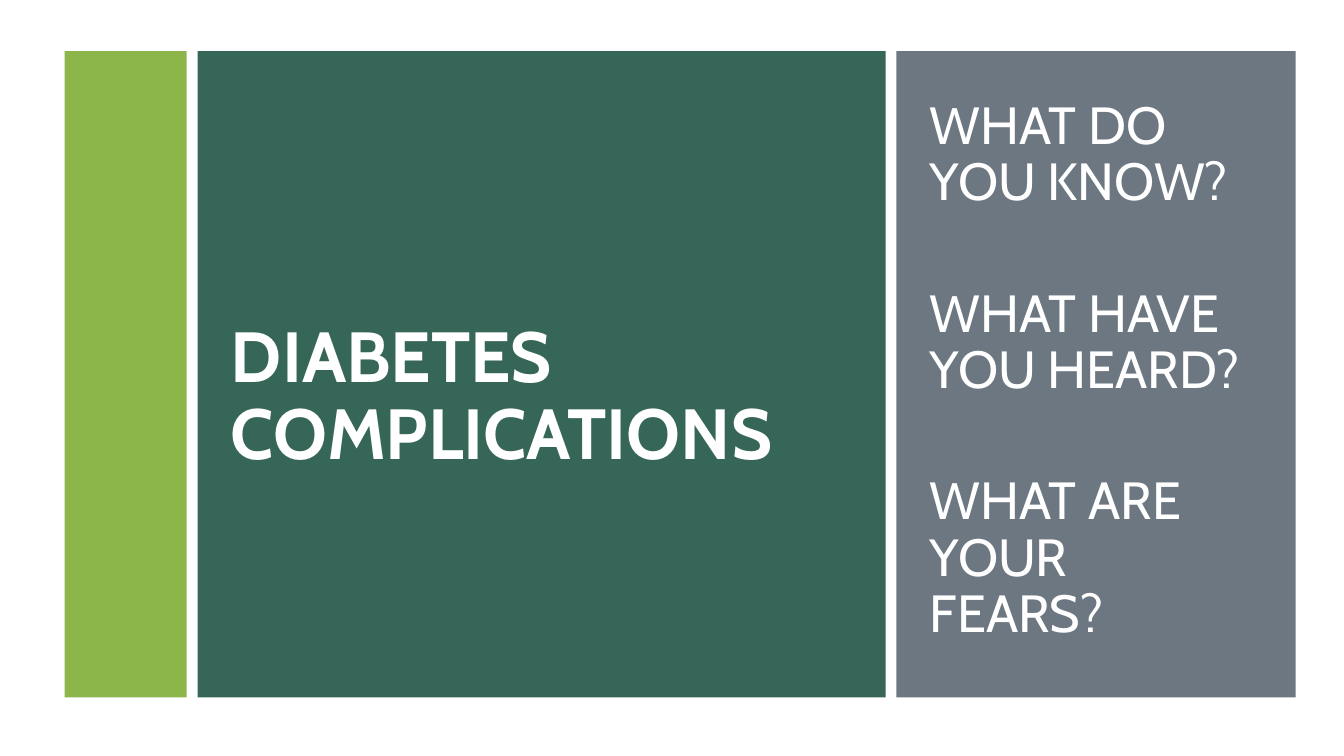
from pptx import Presentation
from pptx.dml.color import RGBColor
from pptx.enum import shapes, text
from pptx.util import Inches, Pt

TITLE = ["DIABETES COMPLICATIONS"]
QUESTIONS = ["WHAT DO YOU KNOW?", "WHAT HAVE YOU HEARD?", "WHAT ARE YOUR FEARS?"]

THEME = {
    "font": "Cabin",
    "text": "FFFFFF",
    "accent": "8CB64A",
    "title_panel": "366658",
    "question_panel": "6C7781",
    "title_size": 38,
    "question_size": 28,
}

PANELS = [("accent", 0.91), ("title_panel", 5.12), ("question_panel", 2.97)]
LEFT, TOP, HEIGHT, GAP = 0.48, 0.38, 4.81, 0.08
TEXT_INDENT = 0.15


def add_panel(slide, left, width, color):
    panel = slide.shapes.add_shape(
        shapes.MSO_SHAPE.RECTANGLE,
        Inches(left), Inches(TOP), Inches(width), Inches(HEIGHT),
    )
    panel.shadow.inherit = False
    panel.fill.solid()
    panel.fill.fore_color.rgb = RGBColor.from_string(color)
    panel.line.fill.background()


def add_text(slide, lines, *, box, size, bold=False, gap=0, top_inset=0.05):
    frame = slide.shapes.add_textbox(*map(Inches, box)).text_frame
    frame.word_wrap = True
    frame.vertical_anchor = text.MSO_ANCHOR.MIDDLE
    frame.margin_top = Inches(top_inset)
    for index, line in enumerate(lines):
        paragraph = frame.paragraphs[0] if index == 0 else frame.add_paragraph()
        paragraph.line_spacing = 0.9
        paragraph.space_before = Pt(gap if index else 0)
        run = paragraph.add_run()
        run.text = line
        run.font.name = THEME["font"]
        run.font.size = Pt(size)
        run.font.bold = bold
        run.font.color.rgb = RGBColor.from_string(THEME["text"])


def main():
    deck = Presentation()
    deck.slide_width = Inches(10)
    deck.slide_height = deck.slide_width * 9 // 16
    slide = deck.slides.add_slide(deck.slide_layouts[6])

    text_left = {}
    left = LEFT
    for role, width in PANELS:
        add_panel(slide, left, width, THEME[role])
        text_left[role] = left + TEXT_INDENT
        left += width + GAP

    add_text(slide, TITLE, box=(text_left["title_panel"], 0.7, 4.92, 3.89),
             size=THEME["title_size"], bold=True, top_inset=0.68)
    add_text(slide, QUESTIONS, box=(text_left["question_panel"], 0.55, 2.58, 4.43),
             size=THEME["question_size"], gap=40)

    deck.save("out.pptx")


if __name__ == "__main__":
    main()
